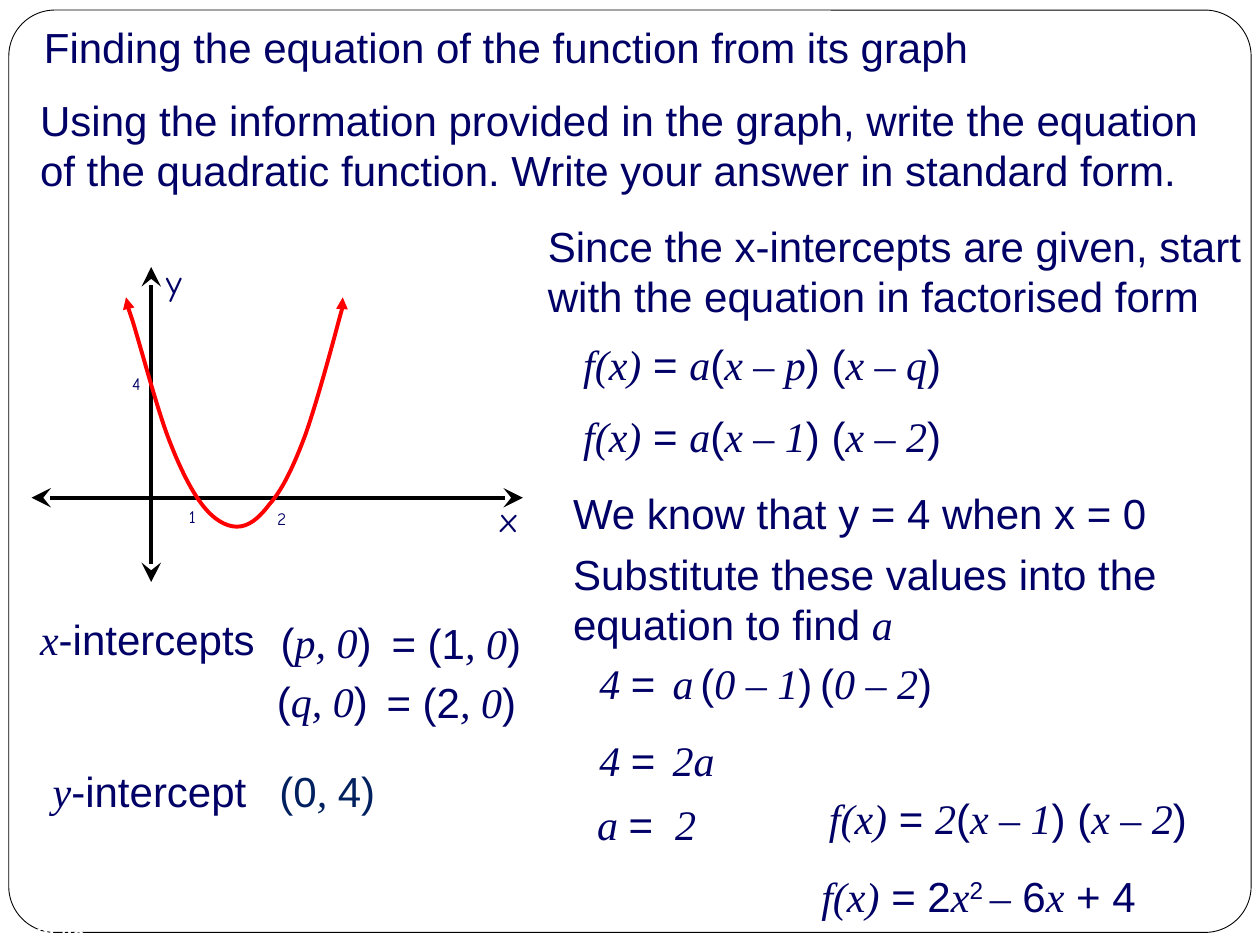
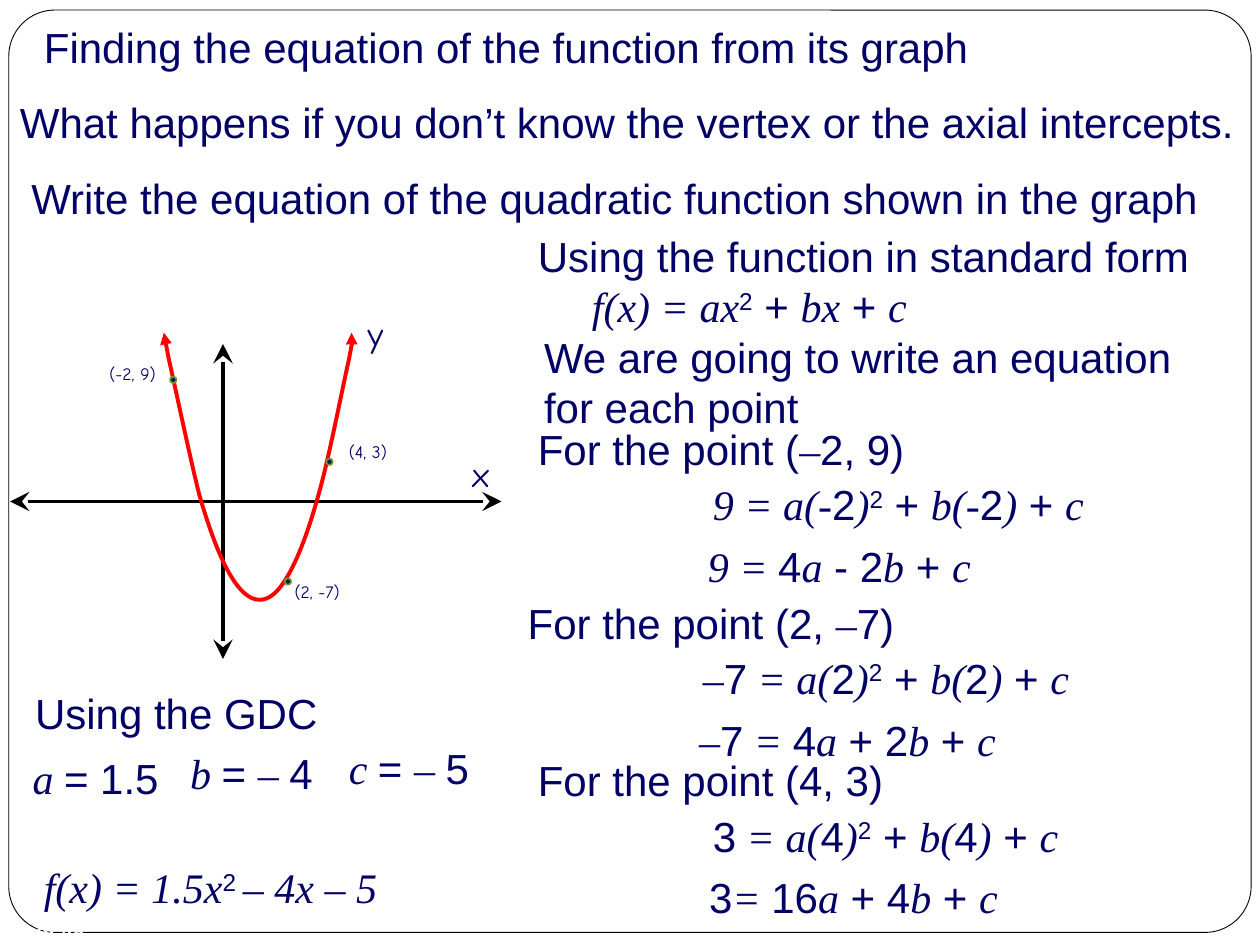
from dataclasses import dataclass

from lxml.etree import SubElement
from pptx import Presentation
from pptx.dml.color import RGBColor
from pptx.enum.shapes import MSO_CONNECTOR, MSO_SHAPE
from pptx.enum.text import MSO_AUTO_SIZE
from pptx.oxml.ns import qn
from pptx.util import Pt

PX = 9144
COLORS = {
    "navy": "010066",
    "ink": "002060",
    "curve": "FF0000",
    "axis": "000000",
    "paper": "FFFFFF",
    "ring": "719629",
}
SANS, MATH, HAND = "Arial", "Times New Roman", "Comic Neue"
TITLE = "Finding the equation of the function from its graph"


@dataclass
class Text:
    text: str
    x: int
    y: int
    w: int
    h: int = 50
    size: int = 24
    font: str = SANS
    color: str = "navy"
    wrap: bool = True
    bold: bool = False


@dataclass
class Axis:
    x1: int
    y1: int
    x2: int
    y2: int


@dataclass
class Dot:
    x: int
    y: int
    d: int = 5


@dataclass
class Page:
    number: int
    axes: list[Axis]
    curve: list[tuple[int, int]]
    texts: list[Text]
    dots: list[Dot]


def rgb(name: str) -> RGBColor:
    return RGBColor.from_string(COLORS[name])


def mark(text: str, x: int, y: int, w: int = 32) -> Text:
    return Text(text, x, y, w, 27, 10, HAND)


def axis_name(text: str, x: int, y: int) -> Text:
    return Text(text, x, y, 35, 43, 20, HAND)


def fitted(text: str, x: int, y: int, w: int, color: str = "navy") -> Text:
    return Text(text, x, y, w, color=color, wrap=False)


def split_runs(text: str) -> list[tuple[str, bool, bool]]:
    """Split *math italic* and ^superscript^ into (text, is_math, is_raised)."""
    return [
        (piece, i % 2 == 1, j % 2 == 1)
        for i, part in enumerate(text.split("*"))
        for j, piece in enumerate(part.split("^"))
        if piece
    ]


def set_face(font, base: str, is_math: bool) -> None:
    font.name = MATH if is_math else base
    font.italic = is_math


def add_text(s, t: Text) -> None:
    box = s.shapes.add_textbox(t.x * PX, t.y * PX, t.w * PX, t.h * PX)
    tf = box.text_frame
    tf.word_wrap = t.wrap
    tf.auto_size = MSO_AUTO_SIZE.SHAPE_TO_FIT_TEXT
    p = tf.paragraphs[0]
    p.font.size = Pt(t.size)
    p.font.bold = t.bold
    p.font.color.rgb = rgb(t.color)
    runs = split_runs(t.text)
    uniform = len({is_math for _, is_math, _ in runs}) == 1
    if uniform:
        set_face(p.font, t.font, runs[0][1])
    for text, is_math, is_raised in runs:
        r = p.add_run()
        r.text = text
        if not uniform:
            set_face(r.font, t.font, is_math)
        if is_raised:
            r.font._element.set("baseline", "30000")


def set_line(shape, color: str, width: float) -> None:
    shape.line.color.rgb = rgb(color)
    shape.line.width = Pt(width)


def add_arrowheads(shape, kind: str, size: str) -> None:
    ln = shape.line._get_or_add_ln()
    for end in ("a:headEnd", "a:tailEnd"):
        SubElement(ln, qn(end), type=kind, w=size, len=size)


def add_preset(s, kind, x: int, y: int, w: int, h: int, fill: str, line: str, width: float):
    sp = s.shapes.add_shape(kind, x * PX, y * PX, w * PX, h * PX)
    sp.shadow.inherit = False
    sp.fill.solid()
    sp.fill.fore_color.rgb = rgb(fill)
    set_line(sp, line, width)
    return sp


def add_axis(s, a: Axis) -> None:
    line = s.shapes.add_connector(
        MSO_CONNECTOR.STRAIGHT, a.x1 * PX, a.y1 * PX, a.x2 * PX, a.y2 * PX
    )
    set_line(line, "axis", 2.25)
    add_arrowheads(line, "stealth", "lg")
    SubElement(line._element.spPr, qn("a:effectLst"))


def add_curve(s, points: list[tuple[int, int]]) -> None:
    builder = s.shapes.build_freeform(*points[0], scale=PX)
    builder.add_line_segments(points[1:], close=False)
    sp = builder.convert_to_shape()
    segments = list(sp._element.iter(qn("a:lnTo")))
    for i in range(0, len(segments), 3):
        first, *rest = segments[i : i + 3]
        first.tag = qn("a:cubicBezTo")
        bezier = SubElement(first.getparent(), qn("a:cubicBezTo"))
        for segment in (first, *rest):
            bezier.append(segment[0])
            segment.getparent().remove(segment)
    sp.shadow.inherit = False
    sp.fill.background()
    set_line(sp, "curve", 2.25)
    add_arrowheads(sp, "triangle", "med")


def add_page(prs, page: Page) -> None:
    s = prs.slides.add_slide(prs.slide_layouts[6])
    frame = add_preset(s, MSO_SHAPE.ROUNDED_RECTANGLE, 7, 8, 986, 732, "paper", "axis", 0.5)
    frame.adjustments[0] = 0.05
    footer = f" {page.number} of 48"
    add_text(s, Text(footer, 0, 724, 89, 30, 12, color="paper", wrap=False, bold=True))
    add_text(s, Text(TITLE, 25, 12, 952))
    for a in page.axes:
        add_axis(s, a)
    add_curve(s, page.curve)
    for d in page.dots:
        add_preset(s, MSO_SHAPE.OVAL, d.x, d.y, d.d, d.d, "ink", "ring", 1)
    for t in page.texts:
        add_text(s, t)


INTERCEPTS = Page(
    number=6,
    axes=[Axis(120, 212, 120, 462), Axis(25, 395, 415, 395)],
    curve=[
        (100, 236), (100, 236), (99, 236), (105, 254),
        (111, 273), (124, 322), (133, 346),
        (142, 370), (151, 388), (160, 400),
        (169, 412), (179, 418), (188, 418),
        (197, 418), (205, 412), (214, 400),
        (224, 389), (233, 370), (242, 346),
        (251, 321), (264, 273), (269, 254),
        (274, 236), (273, 236), (272, 236),
    ],
    texts=[
        mark("1", 140, 397),
        mark("2", 210, 398),
        mark("4", 95, 291),
        axis_name("x", 387, 390),
        axis_name("y", 122, 202),
        Text("Using the information provided in the graph, write the equation of the "
             "quadratic function. Write your answer in standard form.", 22, 70, 940, 91),
        Text("Since the x-intercepts are given, start with the equation in factorised form",
             425, 170, 575, 91),
        Text("*f(x)* = *a*(*x – p*) (*x – q*)", 453, 264, 417),
        Text("*f(x)* = *a*(*x – 1*) (*x – 2*)", 453, 321, 417),
        Text("We know that y = 4 when x = 0", 445, 382, 516),
        Text("Substitute these values into the equation to find *a*", 445, 430, 516, 91),
        Text("*x*-intercepts", 22, 482, 220),
        fitted("(*p, 0*)", 213, 484, 93),
        fitted("= (1*, 0*)", 301, 485, 124),
        fitted("(*q, 0*)", 210, 531, 93),
        fitted("= (2*, 0*)", 297, 532, 124),
        Text("*y*-intercept", 32, 603, 181),
        fitted("(0*, *4)", 212, 603, 97, "ink"),
        Text("*4 *=", 466, 517, 73),
        Text("*a*", 524, 517, 38),
        Text("(*0 – 1*)", 546, 517, 119),
        Text("(*0 – 2*)", 641, 517, 122),
        Text("*4 *=", 466, 578, 73),
        Text("*2a*", 524, 578, 60),
        Text("*a *=", 464, 629, 82),
        Text("*2*", 526, 629, 73),
        Text("*f(x)* = *2*(*x – 1*) (*x – 2*)", 648, 624, 352),
        Text("*f(x)* = 2*x*^2 ^*–* 6*x* + 4", 642, 686, 352),
    ],
    dots=[],
)

THREE_POINTS = Page(
    number=8,
    axes=[Axis(177, 273, 177, 523), Axis(8, 398, 398, 398)],
    curve=[
        (130, 264), (130, 264), (130, 264), (134, 285),
        (139, 307), (151, 364), (158, 392),
        (166, 420), (174, 441), (182, 455),
        (190, 469), (198, 476), (206, 476),
        (214, 476), (221, 470), (229, 456),
        (237, 442), (245, 421), (253, 392),
        (261, 364), (272, 307), (277, 285),
        (281, 264), (280, 264), (279, 264),
    ],
    texts=[
        mark("(-2, 9)", 77, 283, 68),
        mark("(4, 3)", 267, 345, 68),
        mark("(2, -7)", 224, 456, 68),
        axis_name("x", 365, 354),
        axis_name("y", 282, 243),
        Text("What happens if you don’t know the vertex or the axial intercepts.", 6, 72, 990),
        Text("Write the equation of the quadratic function shown in the graph", 15, 132, 975),
        Text("Using the function in standard form", 417, 178, 545),
        Text("*f(x) = ax*^2^ + *bx* + *c*", 460, 218, 417),
        Text("We are going to write an equation for each point", 422, 258, 540, 91),
        fitted("For the point (*–*2, 9)", 417, 331, 314),
        Text("*9 = a(-*2*)*^2^ + *b(-*2*)* + *c*", 556, 375, 417),
        Text("*9 = *4*a* - 2*b* + *c*", 552, 424, 417),
        fitted("For the point (2, *–*7)", 409, 469, 314),
        Text("*–*7* = a(*2*)*^2^ + *b(*2*)* + *c*", 548, 513, 417),
        Text("*–*7* = *4*a* + 2*b* + *c*", 545, 562, 417),
        fitted("For the point (4, 3)", 417, 594, 297),
        Text("3* = a(*4*)*^2^ + *b(*4*)* + *c*", 556, 638, 417),
        Text("3*= *16*a* + 4*b* + *c*", 553, 687, 417),
        Text("Using the GDC", 18, 541, 300),
        Text("*a *= 1.5", 16, 592, 129),
        Text("*b *= *– *4", 141, 588, 129),
        Text("*c *= *– *5", 267, 584, 129),
        Text("*f(x) = 1.5x*^2 ^*– 4x – 5*", 25, 679, 417),
    ],
    dots=[Dot(135, 299), Dot(259, 364), Dot(226, 459)],
)


def main() -> None:
    prs = Presentation()
    prs.slide_width, prs.slide_height = 1000 * PX, 750 * PX
    for page in (INTERCEPTS, THREE_POINTS):
        add_page(prs, page)
    prs.save("out.pptx")


if __name__ == "__main__":
    main()
